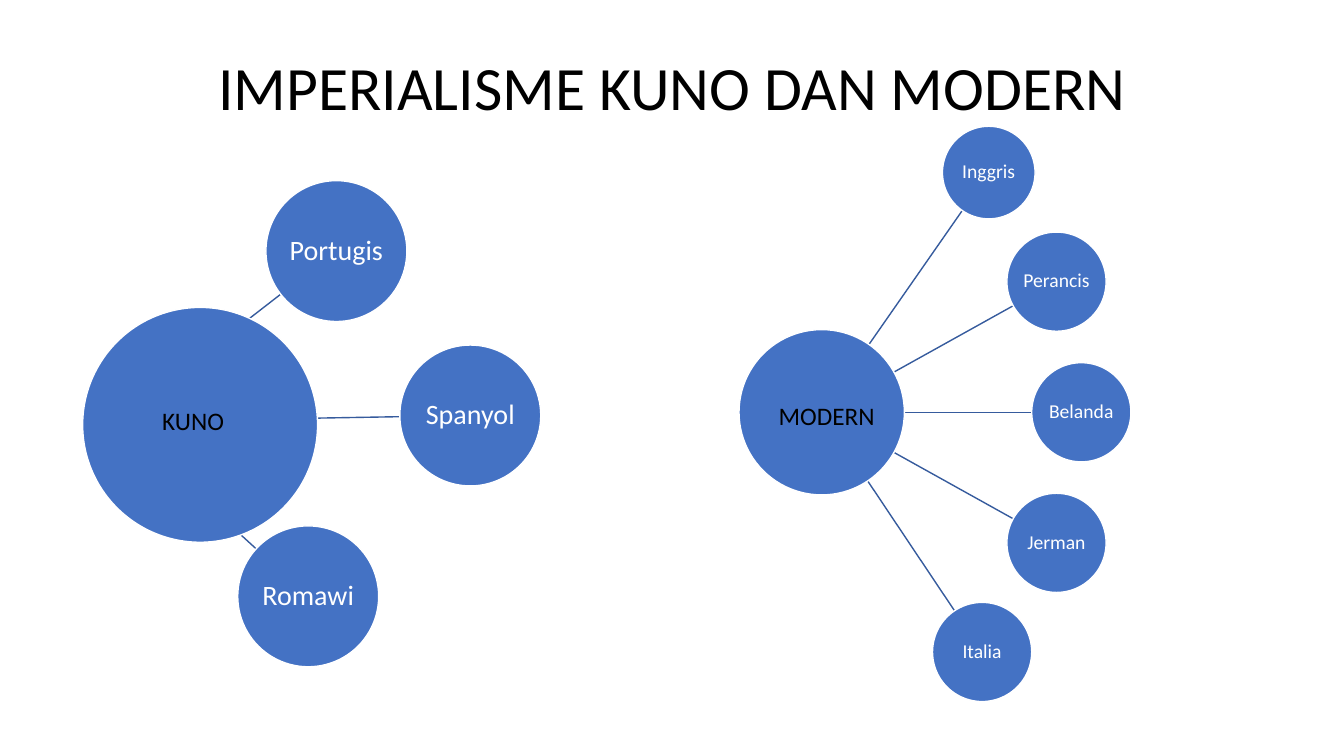
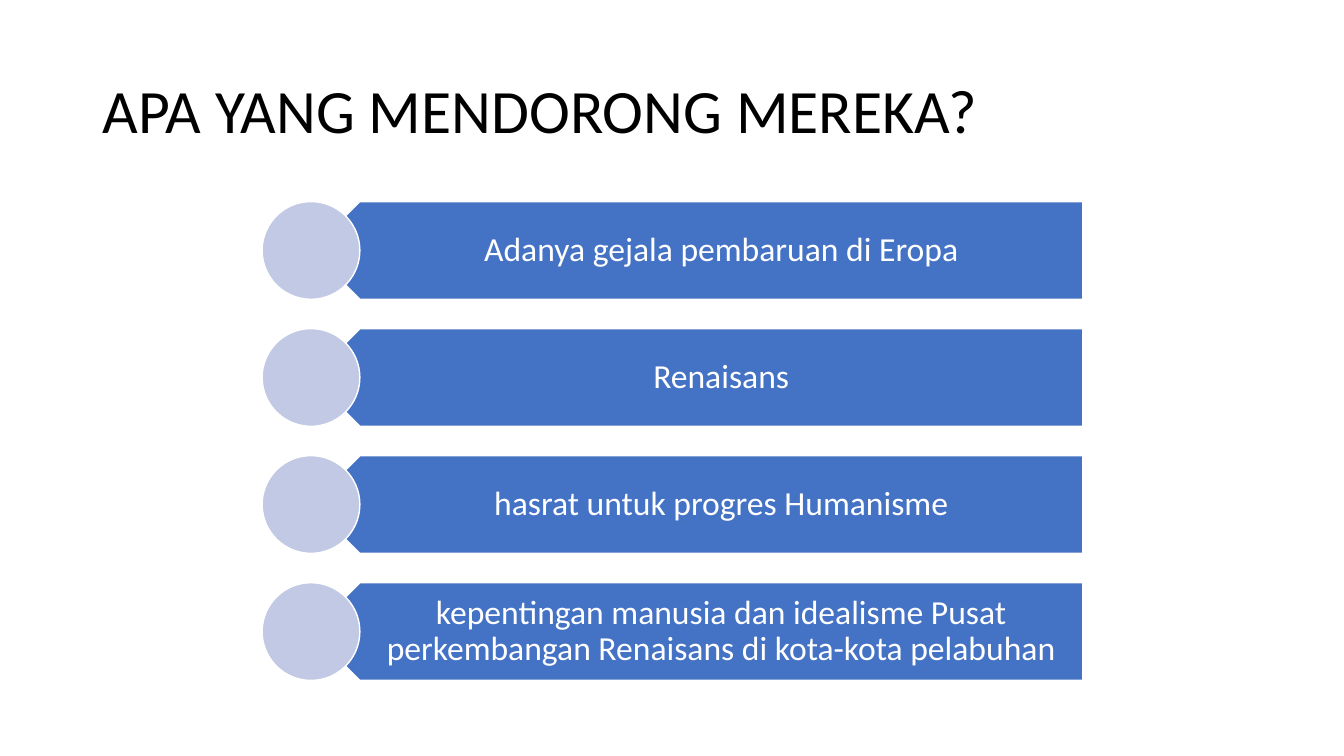
import pptx
import pptx.dml.color
import pptx.enum.shapes
import pptx.enum.text
import pptx.oxml.ns
import pptx.util
import lxml.etree

SLIDE_W, SLIDE_H = 13.33, 7.5
FONT = "Calibri"
BLUE, PALE, SPOKE, WHITE, BLACK = "4472C4", "C1C9E4", "365B9D", "FFFFFF", "000000"
SHAPES = pptx.enum.shapes.MSO_SHAPE
ALIGN = pptx.enum.text.PP_ALIGN
inches = pptx.util.Inches


def rgb(value):
    return pptx.dml.color.RGBColor.from_string(value)


def write(shape, text, size, color, align=ALIGN.CENTER, insets=(0.01,) * 4, wrap=True):
    """Put one paragraph, centred vertically, into a shape; insets run left, top, right, bottom."""
    frame = shape.text_frame
    frame.text = text
    frame.word_wrap = wrap
    frame.auto_size = pptx.enum.text.MSO_AUTO_SIZE.NONE
    frame.vertical_anchor = pptx.enum.text.MSO_ANCHOR.MIDDLE
    (frame.margin_left, frame.margin_top,
     frame.margin_right, frame.margin_bottom) = map(inches, insets)
    paragraph = frame.paragraphs[0]
    paragraph.alignment = align
    paragraph.line_spacing = 0.9
    paragraph.font.name = FONT
    paragraph.font.size = pptx.util.Pt(size)
    paragraph.font.color.rgb = rgb(color)


def add_solid(slide, preset, box, fill):
    shape = slide.shapes.add_shape(preset, *map(inches, box))
    shape.shadow.inherit = False
    shape.fill.solid()
    shape.fill.fore_color.rgb = rgb(fill)
    shape.line.color.rgb = rgb(WHITE)
    shape.line.width = pptx.util.Pt(1)
    return shape


def add_circle(slide, x, y, diameter, fill):
    """Draw a circle around the centre x, y."""
    box = (x - diameter / 2, y - diameter / 2, diameter, diameter)
    return add_solid(slide, SHAPES.OVAL, box, fill)


def add_spoke(slide, start, end):
    spoke = slide.shapes.add_connector(
        pptx.enum.shapes.MSO_CONNECTOR.STRAIGHT, *map(inches, start + end))
    spoke.line.color.rgb = rgb(SPOKE)
    spoke.line.width = pptx.util.Pt(1)
    lxml.etree.SubElement(spoke._element.spPr, pptx.oxml.ns.qn("a:effectLst"))


def add_titled_slide(deck, title, top, align):
    slide = deck.slides.add_slide(deck.slide_layouts[5])
    heading = slide.shapes.title
    heading.left, heading.top = inches(0.92), inches(top)
    heading.width, heading.height = inches(11.5), inches(1.45)
    write(heading, title, 44, BLACK, align, (0.1, 0.05, 0.1, 0.05))
    return slide


def add_fan(slide, hub_box, era, era_shift, powers, size):
    """Draw a hub and its powers; shifts and diameters are shares of the hub's diameter.

    Each power is (name, x shift, y shift, diameter, y shift of the spoke's start).
    """
    left, top, hub = hub_box
    x, y = left + hub / 2, top + hub / 2
    for _, dx, dy, _, start in powers:
        add_spoke(slide, (x, y + start * hub), (x + dx * hub, y + dy * hub))
    add_circle(slide, x, y, hub, BLUE)
    for name, dx, dy, share, _ in powers:
        power = add_circle(slide, x + dx * hub, y + dy * hub, share * hub, BLUE)
        write(power, name, size, WHITE, wrap=False)
    dx, dy = era_shift
    label = slide.shapes.add_textbox(
        *map(inches, (left + dx * hub, y + dy * hub - 0.2, hub, 0.4)))
    write(label, era, 18, BLACK)


def add_reason_list(slide, box, reasons):
    """Stack equally spaced banners, each with a pale circle over its pointed end."""
    left, top, width, height = box
    banner = height * 0.204
    pitch = (height - banner) / (len(reasons) - 1)
    for row, reason in enumerate(reasons):
        y = top + row * pitch
        plate = add_solid(slide, SHAPES.PENTAGON,
                          (left + banner / 2, y, width - banner / 2, banner), BLUE)
        plate.rotation = 180
        text_left = banner * 0.75
        words = slide.shapes.add_textbox(
            *map(inches, (left + text_left, y, width - text_left, banner)))
        write(words, reason, 24, WHITE, insets=(0.43, 0.1, 0.19, 0.1))
        add_circle(slide, left + banner / 2, y + banner / 2, banner, PALE)


def build_eras(deck):
    slide = add_titled_slide(deck, "IMPERIALISME KUNO DAN MODERN", 0.17, ALIGN.CENTER)
    add_fan(slide, (0.82, 3.05, 2.33), "KUNO", (-0.03, -0.01), [
        ("Portugis", 0.58, -0.74, 0.6, -0.29),
        ("Spanyol", 1.15, -0.04, 0.6, -0.02),
        ("Romawi", 0.46, 0.73, 0.6, 0.31),
    ], 20)
    add_fan(slide, (7.33, 3.27, 1.64), "MODERN", (0.03, 0.03), [
        ("Inggris", 1.01, -1.45, 0.56, 0),
        ("Perancis", 1.42, -0.79, 0.6, 0),
        ("Belanda", 1.57, 0, 0.6, 0),
        ("Jerman", 1.42, 0.79, 0.6, 0),
        ("Italia", 0.97, 1.45, 0.6, 0),
    ], 14)


def build_reasons(deck):
    slide = add_titled_slide(deck, "APA YANG MENDORONG MEREKA?", 0.4, ALIGN.LEFT)
    add_reason_list(slide, (2.6, 2, 8.14, 4.75), [
        "Adanya gejala pembaruan di Eropa",
        "Renaisans",
        "hasrat untuk progres Humanisme",
        "kepentingan manusia dan idealisme Pusat perkembangan Renaisans di kota-kota pelabuhan",
    ])


def main():
    deck = pptx.Presentation()
    deck.slide_width, deck.slide_height = inches(SLIDE_W), inches(SLIDE_H)
    build_eras(deck)
    build_reasons(deck)
    deck.save("out.pptx")


if __name__ == "__main__":
    main()
